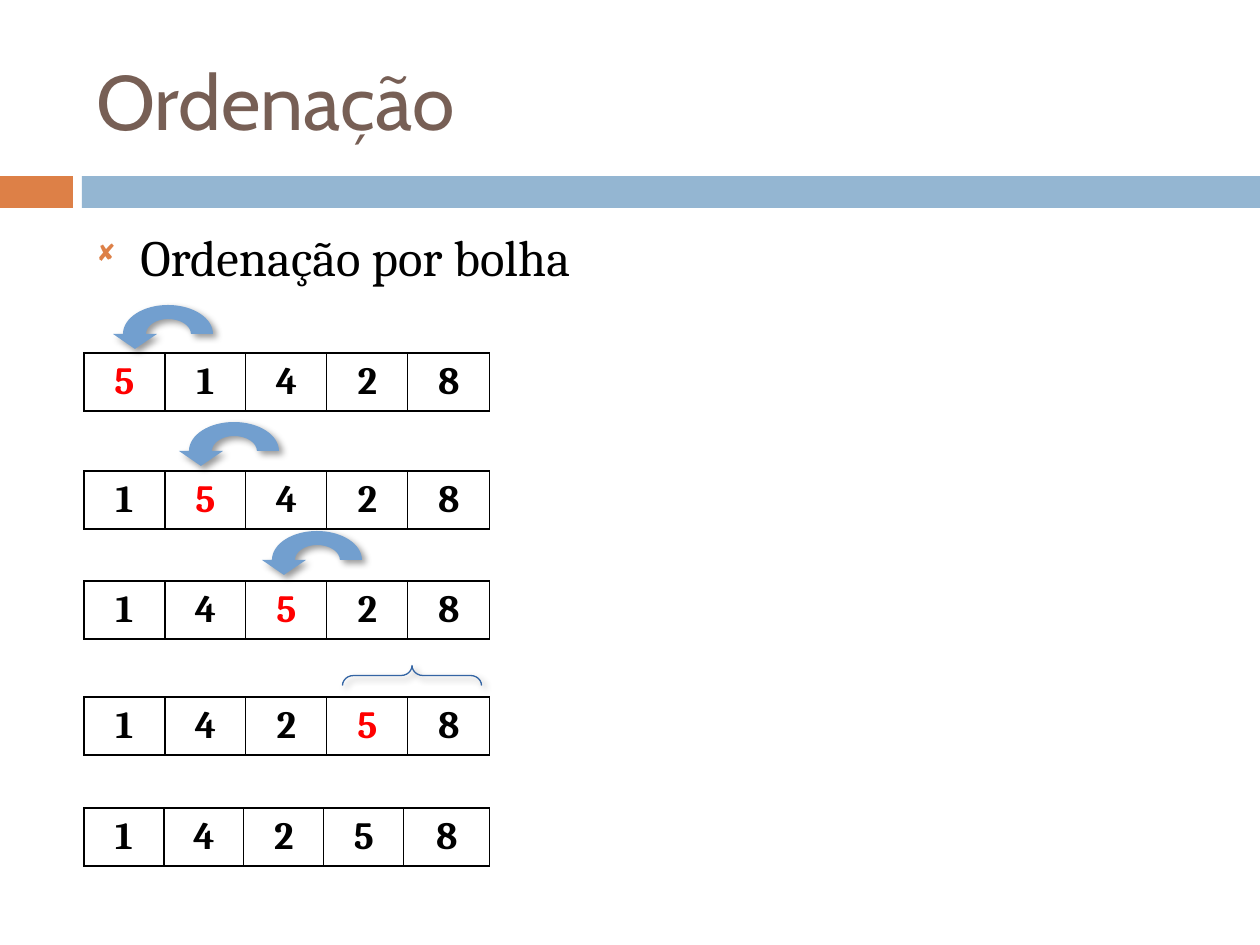
from dataclasses import dataclass

from lxml.etree import SubElement
from pptx import Presentation
from pptx.dml.color import RGBColor as Rgb
from pptx.enum.shapes import MSO_SHAPE as Shape
from pptx.enum.text import MSO_ANCHOR as Anchor, PP_ALIGN as Align
from pptx.oxml.ns import qn
from pptx.util import Pt

SCALE = 914400 / 126


@dataclass(frozen=True)
class Theme:
    title_font: str = "Cabin"
    body_font: str = "Cambria"
    bullet_font: str = "Wingdings"
    title_size: int = 44
    body_size: int = 29
    cell_size: int = 22
    title: str = "775F55"
    accent: str = "DD8047"
    band: str = "94B6D2"
    ink: str = "000000"
    moving: str = "FF0000"
    arrow: str = "729FCF"
    brace: str = "3465A4"


THEME = Theme()

PASSES = [
    (353, "51428", 0),
    (471, "15428", 1),
    (581, "14528", 2),
    (697, "14258", 3),
    (808, "14258", None),
]
SWAP_ARROWS = [(123, 305), (189, 422), (272, 531)]

ARROW_SIZE = (90, 59)
ARROW_OUTLINE = [
    [(23, 29)],
    [(23, 21), (33, 14), (45, 14)],
    [(58, 14), (68, 21), (68, 29)],
    [(90, 29)],
    [(90, 13), (70, 0), (45, 0)],
    [(20, 0), (0, 13), (0, 29)],
    [(-10, 29)],
    [(12, 44)],
    [(34, 29)],
]


def px(length):
    return round(length * SCALE)


def add_run(paragraph, text, font, size, color, bold=False):
    run = paragraph.add_run()
    run.text = text
    run.font.name = font
    run.font.size = Pt(size)
    run.font.bold = bold
    run.font.color.rgb = Rgb.from_string(color)


def add_band(slide, left, width, color):
    band = slide.shapes.add_shape(Shape.RECTANGLE, px(left), px(176), px(width), px(32))
    band.shadow.inherit = False
    band.fill.solid()
    band.fill.fore_color.rgb = Rgb.from_string(color)
    band.line.fill.background()


def add_text(slide, box, anchor):
    frame = slide.shapes.add_textbox(*map(px, box)).text_frame
    frame.word_wrap = True
    frame.vertical_anchor = anchor
    return frame.paragraphs[0]


def add_bullet(paragraph, char, color):
    paragraph.space_before = Pt(7)
    properties = paragraph._p.get_or_add_pPr()
    properties.set("marL", str(px(44)))
    properties.set("indent", str(px(-44)))
    bullet_color = SubElement(properties, qn("a:buClr"))
    SubElement(bullet_color, qn("a:srgbClr"), val=color)
    SubElement(properties, qn("a:buSzPct"), val="60000")
    SubElement(properties, qn("a:buFont"), typeface=THEME.bullet_font)
    SubElement(properties, qn("a:buChar"), char=char)


def add_borders(cell):
    properties = cell._tc.get_or_add_tcPr()
    for side in ("lnL", "lnR", "lnT", "lnB"):
        border = SubElement(properties, qn(f"a:{side}"), w=str(Pt(0.75)))
        fill = SubElement(border, qn("a:solidFill"))
        SubElement(fill, qn("a:srgbClr"), val=THEME.ink)


def add_array(slide, top, digits, moving):
    width, height = 406, 58
    step = 80 if moving is None else 81
    last = len(digits) - 1
    table = slide.shapes.add_table(
        1, len(digits), px(84), px(top), px(width), px(height)
    ).table
    table.first_row = table.horz_banding = False
    table.rows[0].height = px(height)
    for index, digit in enumerate(digits):
        table.columns[index].width = px(width - step * last if index == last else step)
        cell = table.cell(0, index)
        add_borders(cell)
        cell.fill.background()
        cell.margin_top = cell.margin_bottom = 0
        cell.vertical_anchor = Anchor.MIDDLE
        paragraph = cell.text_frame.paragraphs[0]
        paragraph.alignment = Align.CENTER
        color = THEME.moving if index == moving else THEME.ink
        add_run(paragraph, digit, THEME.body_font, THEME.cell_size, color, True)


def add_shadow(shape):
    shape.shadow.inherit = False
    effects = shape._element.spPr.find(qn("a:effectLst"))
    shadow = SubElement(
        effects, qn("a:outerShdw"),
        blurRad=str(Pt(4)), dist=str(Pt(3)), dir=str(45 * 60000),
    )
    color = SubElement(shadow, qn("a:srgbClr"), val=THEME.ink)
    SubElement(color, qn("a:alpha"), val="40000")


def draw_outline(shape, size, segments):
    outline = next(shape._element.iter(qn("a:path")))
    for step in list(outline):
        outline.remove(step)
    width, height = map(px, size)
    outline.set("w", str(width))
    outline.set("h", str(height))
    for index, segment in enumerate(segments):
        straight = "a:lnTo" if index else "a:moveTo"
        step = SubElement(outline, qn(straight if len(segment) == 1 else "a:cubicBezTo"))
        for x, y in segment:
            SubElement(step, qn("a:pt"), x=str(px(x)), y=str(px(y)))
    SubElement(outline, qn("a:close"))


def add_swap_arrow(slide, left, top):
    builder = slide.shapes.build_freeform()
    builder.add_line_segments([tuple(map(px, ARROW_SIZE))])
    arrow = builder.convert_to_shape()
    arrow.left, arrow.top = px(left), px(top)
    arrow.width, arrow.height = map(px, ARROW_SIZE)
    draw_outline(arrow, ARROW_SIZE, ARROW_OUTLINE)
    arrow.fill.solid()
    arrow.fill.fore_color.rgb = Rgb.from_string(THEME.arrow)
    arrow.line.fill.background()
    add_shadow(arrow)


def add_brace(slide):
    brace = slide.shapes.add_shape(Shape.LEFT_BRACE, px(402), px(606), px(20), px(139))
    brace.rotation = 90
    brace.adjustments[0] = 0.55
    brace.fill.background()
    brace.line.color.rgb = Rgb.from_string(THEME.brace)
    brace.line.width = Pt(0)
    add_shadow(brace)


def main():
    deck = Presentation()
    deck.slide_width, deck.slide_height = px(1260), px(945)
    slide = deck.slides.add_slide(deck.slide_layouts[6])

    add_band(slide, 0, 73, THEME.accent)
    add_band(slide, 82, 1178, THEME.band)
    title = add_text(slide, (84, 32, 1124, 136), Anchor.MIDDLE)
    add_run(title, "Ordenação", THEME.title_font, THEME.title_size, THEME.title)
    topic = add_text(slide, (84, 220, 1124, 659), Anchor.TOP)
    add_bullet(topic, "◻", THEME.accent)
    add_run(topic, "Ordenação por bolha", THEME.body_font, THEME.body_size, THEME.ink)

    for top, digits, moving in PASSES:
        add_array(slide, top, digits, moving)
    for left, top in SWAP_ARROWS:
        add_swap_arrow(slide, left, top)
    add_brace(slide)
    deck.save("out.pptx")


if __name__ == "__main__":
    main()
